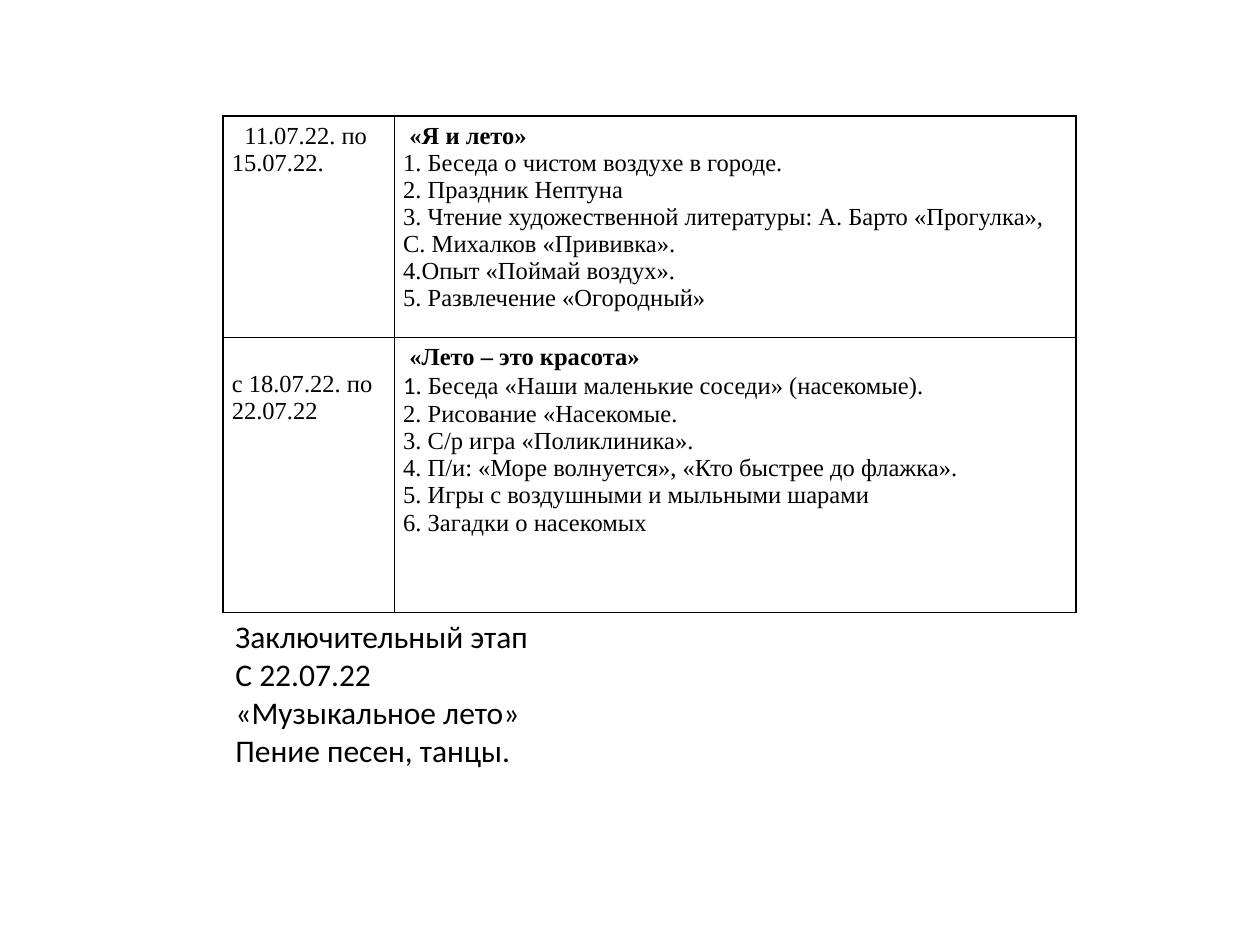
from dataclasses import dataclass

from lxml.etree import SubElement
from pptx import Presentation
from pptx.dml.color import RGBColor
from pptx.oxml.ns import qn
from pptx.table import _Cell as Cell
from pptx.text.text import _Paragraph as Paragraph, _Run as Run
from pptx.util import Inches, Pt

BLACK = RGBColor(0, 0, 0)
WHITE = RGBColor(255, 255, 255)
SERIF = "Times New Roman"
SANS = "Calibri"


@dataclass(frozen=True)
class Line:
    text: str
    bold: bool = False
    indent: float = 0
    sans_lead: str = ""


@dataclass(frozen=True)
class Week:
    height: float
    date: Line
    date_top: float
    plan: tuple[Line, ...]


WEEKS = (
    Week(1.76, Line("11.07.22. по 15.07.22.", indent=0.1), 0.05, (
        Line("«Я и лето»", bold=True, indent=0.05),
        Line("1. Беседа о чистом воздухе в городе."),
        Line("2. Праздник Нептуна"),
        Line("3. Чтение художественной литературы: А. Барто «Прогулка», "
             "С. Михалков «Прививка»."),
        Line("4.Опыт «Поймай воздух»."),
        Line("5. Развлечение «Огородный»"),
    )),
    Week(2.18, Line("с 18.07.22. по 22.07.22"), 0.26, (
        Line("«Лето – это красота»", bold=True, indent=0.05),
        Line(". Беседа «Наши маленькие соседи» (насекомые).", sans_lead="1"),
        Line("2. Рисование «Насекомые."),
        Line("3. С/р игра «Поликлиника»."),
        Line("4. П/и: «Море волнуется», «Кто быстрее до флажка»."),
        Line("5. Игры с воздушными и мыльными шарами"),
        Line("6. Загадки о насекомых"),
    )),
)
FINAL_STAGE = ("Заключительный этап", "С 22.07.22", "«Музыкальное лето»",
               "Пение песен, танцы.")


def style_run(r: Run, font: str, size: int, bold: bool = False) -> None:
    r.font.name = font
    r.font.size = Pt(size)
    r.font.bold = bold
    r.font.color.rgb = BLACK


def write_line(p: Paragraph, line: Line) -> None:
    if line.indent:
        p._p.get_or_add_pPr().set("indent", str(Inches(line.indent)))
    for text, font in ((line.sans_lead, SANS), (line.text, SERIF)):
        if text:
            r = p.add_run()
            r.text = text
            style_run(r, font, 14, line.bold)


def add_borders(cell: Cell) -> None:
    tc_pr = cell._tc.get_or_add_tcPr()
    for i, side in enumerate(("lnL", "lnR", "lnT", "lnB")):
        ln = SubElement(tc_pr, qn(f"a:{side}"), w=str(Pt(1)))
        fill = SubElement(ln, qn("a:solidFill"))
        SubElement(fill, qn("a:srgbClr"), val=str(BLACK))
        tc_pr.insert(i, ln)


def fill_cell(cell: Cell, lines: tuple[Line, ...], top: float = 0.05) -> None:
    cell.margin_left = cell.margin_right = Inches(0.07)
    cell.margin_top, cell.margin_bottom = Inches(top), Inches(0.05)
    cell.fill.solid()
    cell.fill.fore_color.rgb = WHITE
    add_borders(cell)
    tf = cell.text_frame
    for i, line in enumerate(lines):
        write_line(tf.add_paragraph() if i else tf.paragraphs[0], line)


def main() -> None:
    """Build the summer plan slide with its weekly table and final stage."""
    prs = Presentation()
    prs.slide_width, prs.slide_height = Inches(10), Inches(7.5)
    s = prs.slides.add_slide(prs.slide_layouts[6])

    table = s.shapes.add_table(len(WEEKS), 2, Inches(1.77), Inches(0.92),
                               Inches(6.77), Inches(3.94)).table
    table.first_row = table.horz_banding = False
    for column, width in zip(table.columns, (1.36, 5.41)):
        column.width = Inches(width)
    for i, week in enumerate(WEEKS):
        table.rows[i].height = Inches(week.height)
        fill_cell(table.cell(i, 0), (week.date,), week.date_top)
        fill_cell(table.cell(i, 1), week.plan)

    tf = s.shapes.add_textbox(Inches(1.77), Inches(4.85),
                              Inches(6.69), Inches(1.92)).text_frame
    tf.word_wrap = True
    tf.text = "\n".join(FINAL_STAGE)
    for p in tf.paragraphs:
        style_run(p.runs[0], SANS, 18)

    prs.save("out.pptx")


if __name__ == "__main__":
    main()
